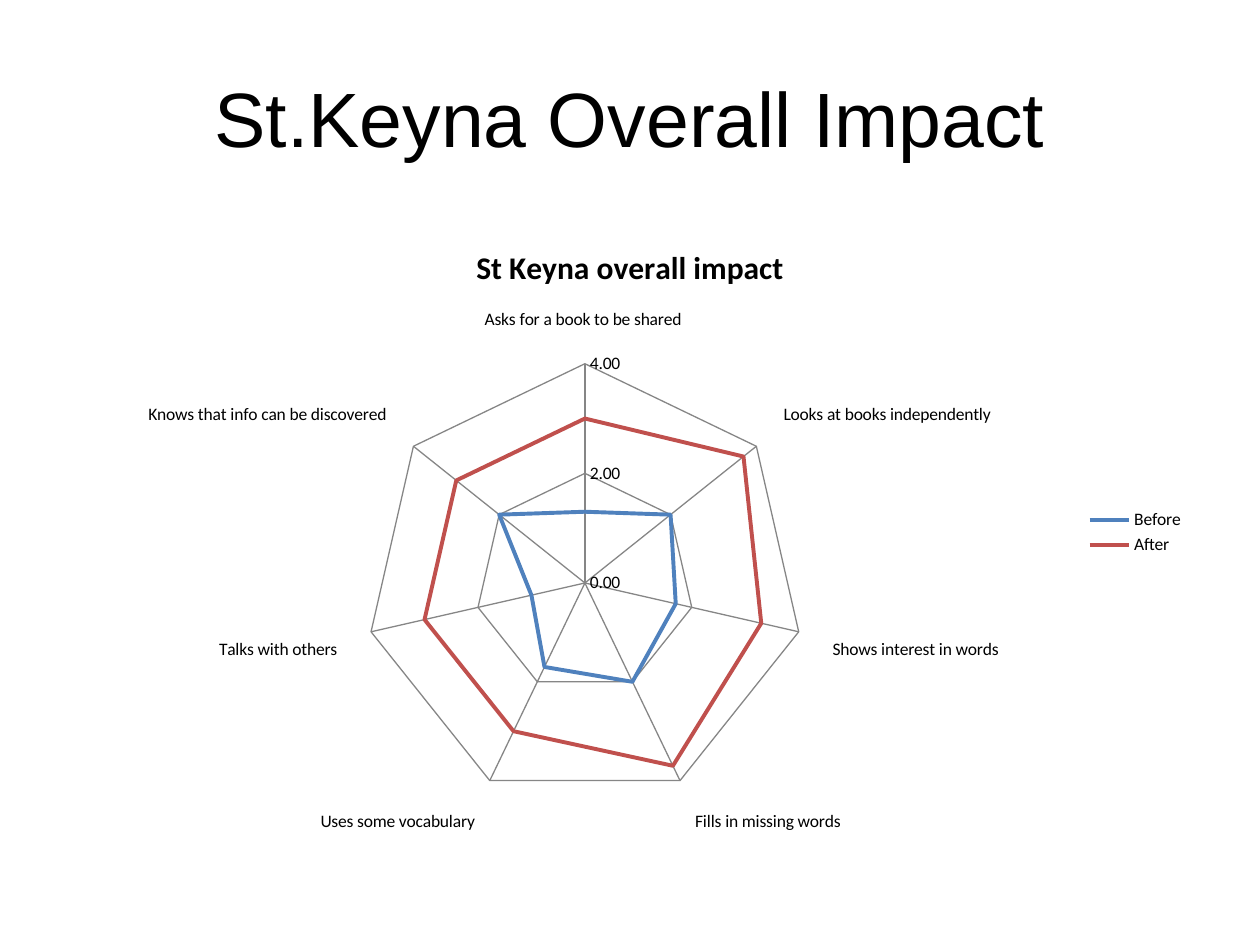
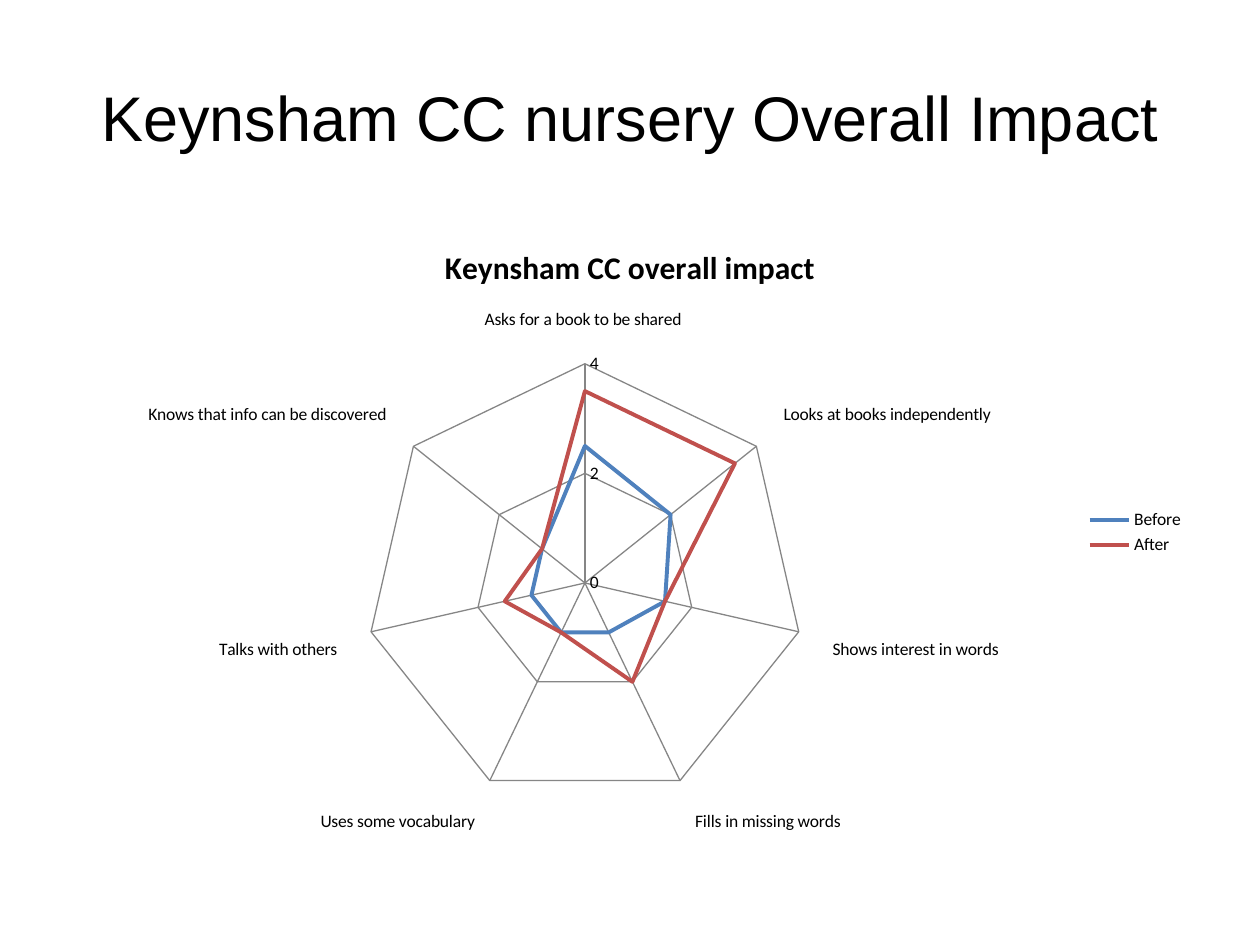
"""Build two slides with radar charts of reading habits before and after."""
from pptx import Presentation
from pptx.chart.data import CategoryChartData
from pptx.dml.color import RGBColor
from pptx.enum.chart import XL_CHART_TYPE, XL_LEGEND_POSITION, XL_TICK_MARK
from pptx.enum.text import MSO_ANCHOR, PP_ALIGN
from pptx.util import Inches, Pt

RADAR = XL_CHART_TYPE.RADAR
LEGEND_RIGHT = XL_LEGEND_POSITION.RIGHT
NO_TICK = XL_TICK_MARK.NONE
MIDDLE = MSO_ANCHOR.MIDDLE
CENTER = PP_ALIGN.CENTER

BLACK = RGBColor(0x00, 0x00, 0x00)
GRID_GREY = RGBColor(0x86, 0x86, 0x86)
BEFORE_BLUE = RGBColor(0x4F, 0x81, 0xBD)
AFTER_RED = RGBColor(0xC0, 0x50, 0x4D)

HABITS = [
    "Asks for a book to be shared ",
    "Looks at books independently",
    "Shows interest in words",
    "Fills in missing words",
    "Uses some vocabulary",
    "Talks with others",
    "Knows that info can be discovered",
]

SETTINGS = [
    ("St.Keyna Overall Impact", 44, "St Keyna overall impact", "0.00",
     [1.3, 2, 1.7, 2, 1.7, 1, 2], [3, 3.7, 3.3, 3.7, 3, 3, 3]),
    ("Keynsham CC nursery Overall Impact", 36, "Keynsham CC overall impact", "General",
     [2.5, 2, 1.5, 1, 1, 1, 1], [3.5, 3.5, 1.5, 2, 1, 1.5, 1]),
]


def style_font(font, name, size):
    font.name = name
    font.size = Pt(size)
    font.color.rgb = BLACK


prs = Presentation()
prs.slide_width = Inches(10)
prs.slide_height = Inches(7.5)
title_only = prs.slide_layouts[5]

for heading, heading_size, chart_heading, number_format, before, after in SETTINGS:
    slide = prs.slides.add_slide(title_only)
    title = slide.shapes.title
    title.left, title.top = Inches(0.5), Inches(0.3)
    title.width, title.height = Inches(9), Inches(1.25)
    title.text_frame.vertical_anchor = MIDDLE
    heading_line = title.text_frame.paragraphs[0]
    heading_line.alignment = CENTER
    heading_run = heading_line.add_run()
    heading_run.text = heading
    style_font(heading_run.font, "Arial", heading_size)

    ratings = CategoryChartData(number_format=number_format)
    ratings.categories = HABITS
    ratings.add_series("Before", before)
    ratings.add_series("After", after)
    impact = slide.shapes.add_chart(
        RADAR, Inches(0.5), Inches(1.75), Inches(9), Inches(4.95), ratings).chart
    style_font(impact.font, "Calibri", 10)

    chart_title_run = impact.chart_title.text_frame.paragraphs[0].add_run()
    chart_title_run.text = chart_heading
    style_font(chart_title_run.font, "Calibri", 18)
    chart_title_run.font.bold = True
    impact.chart_title.include_in_layout = False

    impact.has_legend = True
    impact.legend.position = LEGEND_RIGHT
    impact.legend.include_in_layout = False

    habit_axis, score_axis = impact.category_axis, impact.value_axis
    for axis in (habit_axis, score_axis):
        axis.major_tick_mark = NO_TICK
        axis.minor_tick_mark = NO_TICK
        axis.has_major_gridlines = True
        axis.major_gridlines.format.line.color.rgb = GRID_GREY
        axis.major_gridlines.format.line.width = Pt(0.75)
    habit_axis.format.line.fill.background()
    score_axis.format.line.color.rgb = GRID_GREY
    score_axis.format.line.width = Pt(0.75)
    score_axis.minimum_scale = 0
    score_axis.maximum_scale = 4
    score_axis.major_unit = 2
    score_axis.tick_labels.number_format = number_format
    score_axis.tick_labels.number_format_is_linked = False

    for series, color in zip(impact.plots[0].series, (BEFORE_BLUE, AFTER_RED)):
        series.smooth = False
        series.format.line.color.rgb = color
        series.format.line.width = Pt(2.25)
    impact.plots[0].vary_by_categories = False

prs.save("out.pptx")
